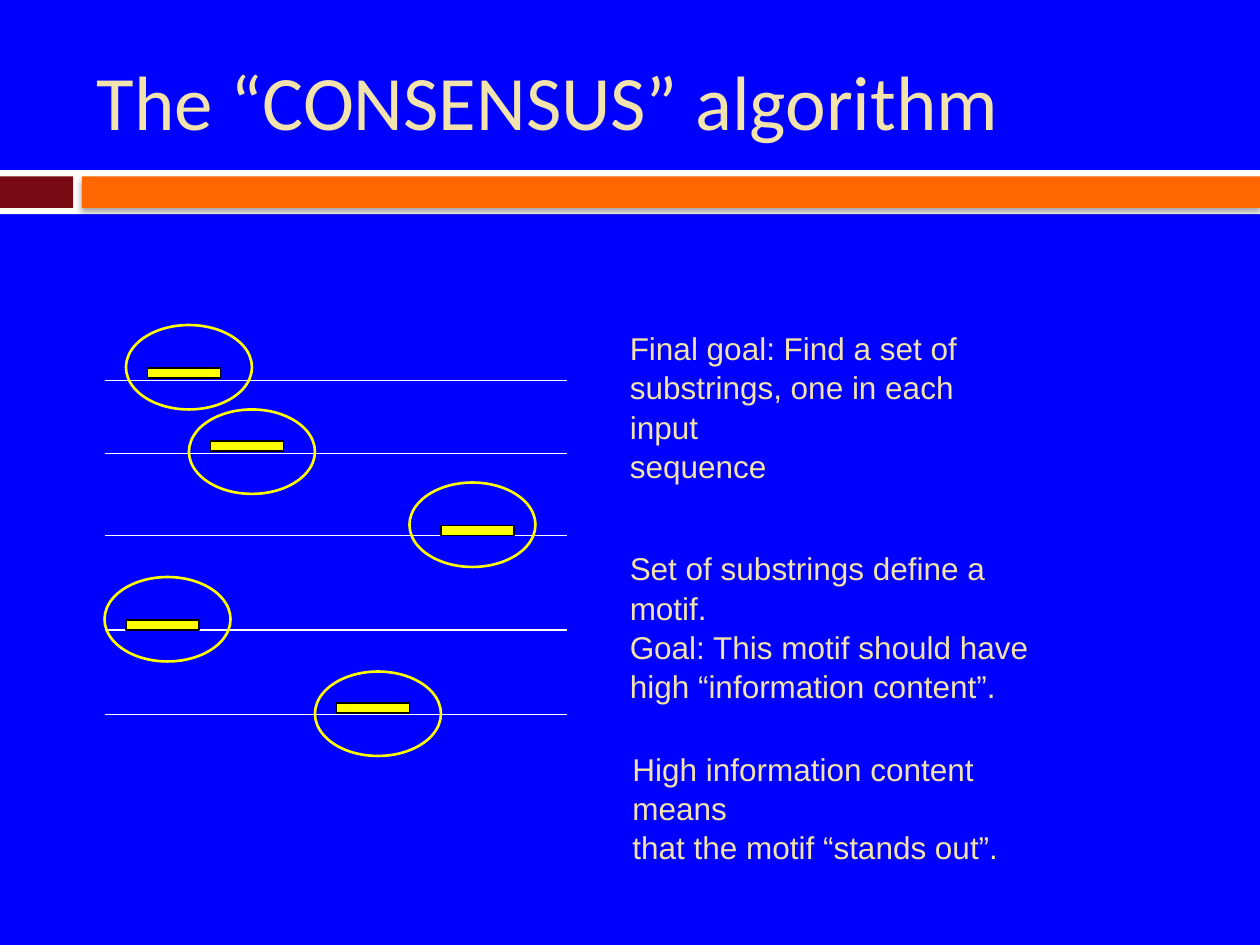
from lxml.etree import SubElement
from pptx import Presentation
from pptx.dml.color import RGBColor
from pptx.enum.shapes import MSO_CONNECTOR, MSO_SHAPE
from pptx.enum.text import MSO_ANCHOR
from pptx.oxml import parse_xml
from pptx.oxml.ns import nsdecls, qn
from pptx.util import Inches, Pt

COLORS = {
    "background": "0000FF",
    "white": "FFFFFF",
    "maroon": "790A14",
    "orange": "FF6600",
    "cream": "F2E2AB",
    "yellow": "FFFF00",
    "black": "000000",
}
TITLE = {"name": "Calibri", "size": Pt(44)}
BODY = {"name": "Arial", "size": Pt(18)}

SEQUENCES = [
    (3.02, 1.17, 2.92, 1, 2.58),
    (3.6, 1.67, 3.5, 1.5, 3.25),
    (4.25, 3.5, 4.17, 3.25, 3.83),
    (5, 1, 4.92, 0.83, 4.58),
    (5.67, 2.67, 5.58, 2.5, 5.33),
]
NOTES = [
    ((4.9, 2.55, 3.08, 1.01),
     ["Final goal: Find a set of", "substrings, one in each input", "sequence"]),
    ((4.9, 4.3, 3.43, 1.01),
     ["Set of substrings define a motif.", "Goal: This motif should have",
      "high “information content”."]),
    ((4.92, 5.89, 3.48, 0.71),
     ["High information content means", "that the motif “stands out”."]),
]


def rgb(name):
    return RGBColor.from_string(COLORS[name])


class Deck:
    def __init__(self, prs):
        self.s = prs.slides.add_slide(prs.slide_layouts[6])
        fill = self.s.background.fill
        fill.solid()
        fill.fore_color.rgb = rgb("background")

    def shape(self, kind, box, fill=None, line=None, width=0.75):
        sp = self.s.shapes.add_shape(kind, *map(Inches, box))
        sp.shadow.inherit = False
        if fill:
            sp.fill.solid()
            sp.fill.fore_color.rgb = rgb(fill)
        else:
            sp.fill.background()
        if line:
            sp.line.color.rgb = rgb(line)
            sp.line.width = Pt(width)
        else:
            sp.line.fill.background()
        return sp

    def shadow(self, sp):
        effects = sp._element.spPr.find(qn("a:effectLst"))
        effects.append(parse_xml(
            f'<a:outerShdw {nsdecls("a")} blurRad="{Pt(3)}" dist="{Pt(2)}" '
            'dir="5400000" rotWithShape="0"><a:srgbClr val="000000">'
            '<a:alpha val="35000"/></a:srgbClr></a:outerShdw>'))

    def line(self, x1, x2, y):
        cn = self.s.shapes.add_connector(
            MSO_CONNECTOR.STRAIGHT, Inches(x1), Inches(y), Inches(x2), Inches(y))
        cn.line.color.rgb = rgb("white")
        cn.line.width = Pt(0.75)
        SubElement(cn._element.spPr, qn("a:effectLst"))

    def text(self, box, lines, style, anchor=MSO_ANCHOR.TOP, spacing=1.0):
        tf = self.s.shapes.add_textbox(*map(Inches, box)).text_frame
        tf.word_wrap = True
        tf.vertical_anchor = anchor
        for i, line in enumerate(lines):
            p = tf.add_paragraph() if i else tf.paragraphs[0]
            p.line_spacing = spacing
            r = p.add_run()
            r.text = line
            for key, value in style.items():
                setattr(r.font, key, value)
            r.font.color.rgb = rgb("cream")


def main():
    prs = Presentation()
    prs.slide_width, prs.slide_height = Inches(10), Inches(7.5)
    deck = Deck(prs)

    deck.shape(MSO_SHAPE.RECTANGLE, (0, 1.35, 10, 0.35), "white")
    deck.shape(MSO_SHAPE.RECTANGLE, (0, 1.4, 0.58, 0.25), "maroon")
    banner = deck.shape(MSO_SHAPE.RECTANGLE, (0.65, 1.4, 9.35, 0.25), "orange")
    deck.shadow(banner)
    deck.text((0.67, 0.25, 8.92, 1.08), ["The “CONSENSUS” algorithm"],
              TITLE, MSO_ANCHOR.MIDDLE)

    for line_y, motif_x, motif_y, ring_x, ring_y in SEQUENCES:
        deck.line(0.83, 4.5, line_y)
        deck.shape(MSO_SHAPE.RECTANGLE, (motif_x, motif_y, 0.58, 0.08),
                   "yellow", "black")
        deck.shape(MSO_SHAPE.OVAL, (ring_x, ring_y, 1, 0.67),
                   line="yellow", width=1.5)

    for box, lines in NOTES:
        deck.text(box, lines, BODY, spacing=1.04)

    prs.save("out.pptx")


if __name__ == "__main__":
    main()
